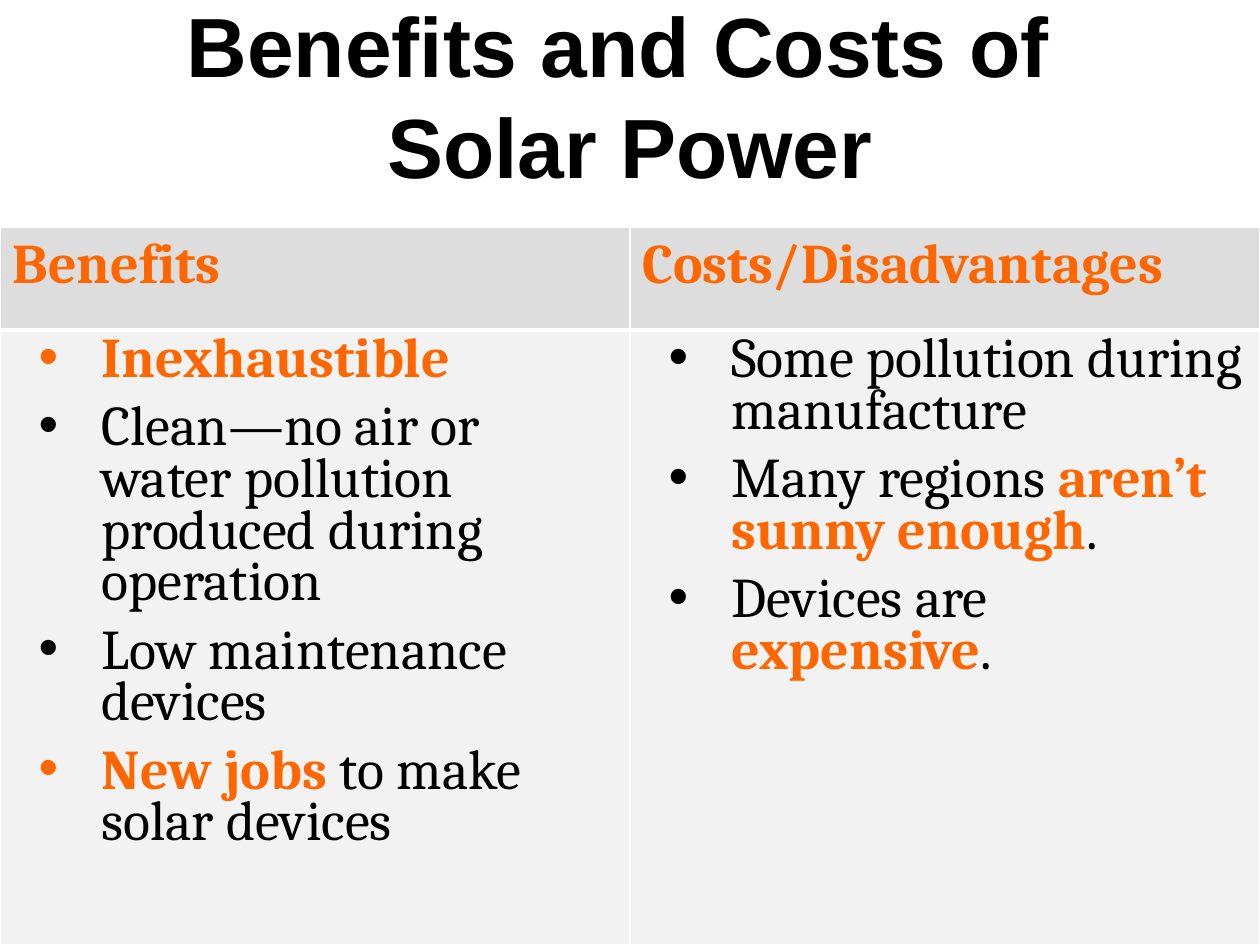
import pptx
import pptx.util
import pptx.dml.color
import pptx.enum.text
import pptx.oxml
import pptx.oxml.ns

HUES = {"ink": "000000", "key": "FF6600", "head": "DDDDDD",
        "body": "F2F2F2", "rule": "FFFFFF"}
SCALE = 914400 / 126
NS = pptx.oxml.ns.nsdecls("a")


def px(num):
    return pptx.util.Emu(round(num * SCALE))


def hue(name):
    return pptx.dml.color.RGBColor.from_string(HUES[name])


class Deck:
    def __init__(self, wide, high):
        self.prs = pptx.Presentation()
        self.prs.slide_width, self.prs.slide_height = px(wide), px(high)
        self.slide = self.prs.slides.add_slide(self.prs.slide_layouts[6])

    def style(self, run, face, size, color, bold):
        font = run.font
        font.name, font.size, font.bold = face, pptx.util.Pt(size), bold
        font.color.rgb = hue(color)

    def title(self, text, left, top, wide, high):
        box = self.slide.shapes.add_textbox(px(left), px(top), px(wide), px(high))
        frame = box.text_frame
        frame.word_wrap = True
        frame.vertical_anchor = pptx.enum.text.MSO_ANCHOR.MIDDLE
        para = frame.paragraphs[0]
        para.text = text
        para.alignment = pptx.enum.text.PP_ALIGN.CENTER
        for run in para.runs:
            self.style(run, "Arial", 48, "ink", True)

    def rich(self, para, text):
        """Write text in which *starred* parts are bold and orange."""
        for num, part in enumerate(text.split("*")):
            if part:
                run = para.add_run()
                run.text = part
                key = num % 2 == 1
                self.style(run, "Cambria", 32, "key" if key else "ink", key)

    def bullet(self, para):
        para.line_spacing = 0.8
        para.space_before = pptx.util.Pt(9.6)
        props = para._p.get_or_add_pPr()
        props.set("marL", str(px(89)))
        props.set("indent", str(px(-63)))
        for tag in ('buFont {} typeface="Arial"', 'buChar {} char="•"'):
            props.append(pptx.oxml.parse_xml(f"<a:{tag.format(NS)}/>"))

    def edges(self, cell, widths):
        props = cell._tc.get_or_add_tcPr()
        for num, (side, width) in enumerate(zip("LRTB", widths)):
            props.insert(num, pptx.oxml.parse_xml(
                f'<a:ln{side} {NS} w="{pptx.util.Pt(width)}"><a:solidFill>'
                f'<a:srgbClr val="{HUES["rule"]}"/></a:solidFill></a:ln{side}>'))

    def cell(self, cell, lines, fill, widths, listed):
        cell.fill.solid()
        cell.fill.fore_color.rgb = hue(fill)
        self.edges(cell, widths)
        frame = cell.text_frame
        for num, line in enumerate(lines):
            para = frame.add_paragraph() if num else frame.paragraphs[0]
            if listed:
                self.bullet(para)
            self.rich(para, line)

    def table(self, heads, lists, left, top, wide, highs):
        grid = self.slide.shapes.add_table(
            2, len(heads), px(left), px(top), px(wide), px(sum(highs))).table
        for row, high in zip(grid.rows, highs):
            row.height = px(high)
        for col, (head, items) in enumerate(zip(heads, lists)):
            self.cell(grid.cell(0, col), [head], "head", (1, 1, 1, 3), False)
            self.cell(grid.cell(1, col), items, "body", (1, 1, 3, 1), True)


def main():
    deck = Deck(1260, 945)

    # Title
    deck.title("Benefits and Costs of \vSolar Power", 0, 16, 1260, 156)

    # Comparison table
    heads = ["*Benefits*", "*Costs/Disadvantages*"]
    gains = ["*Inexhaustible*",
             "Clean—no air or water pollution produced during operation",
             "Low maintenance devices",
             "*New jobs *to make solar devices"]
    costs = ["Some pollution during manufacture",
             "Many regions *aren’t sunny enough*.",
             "Devices are *expensive*."]
    deck.table(heads, [gains, costs], 0, 227, 1260, (103, 615))

    deck.prs.save("out.pptx")


if __name__ == "__main__":
    main()
